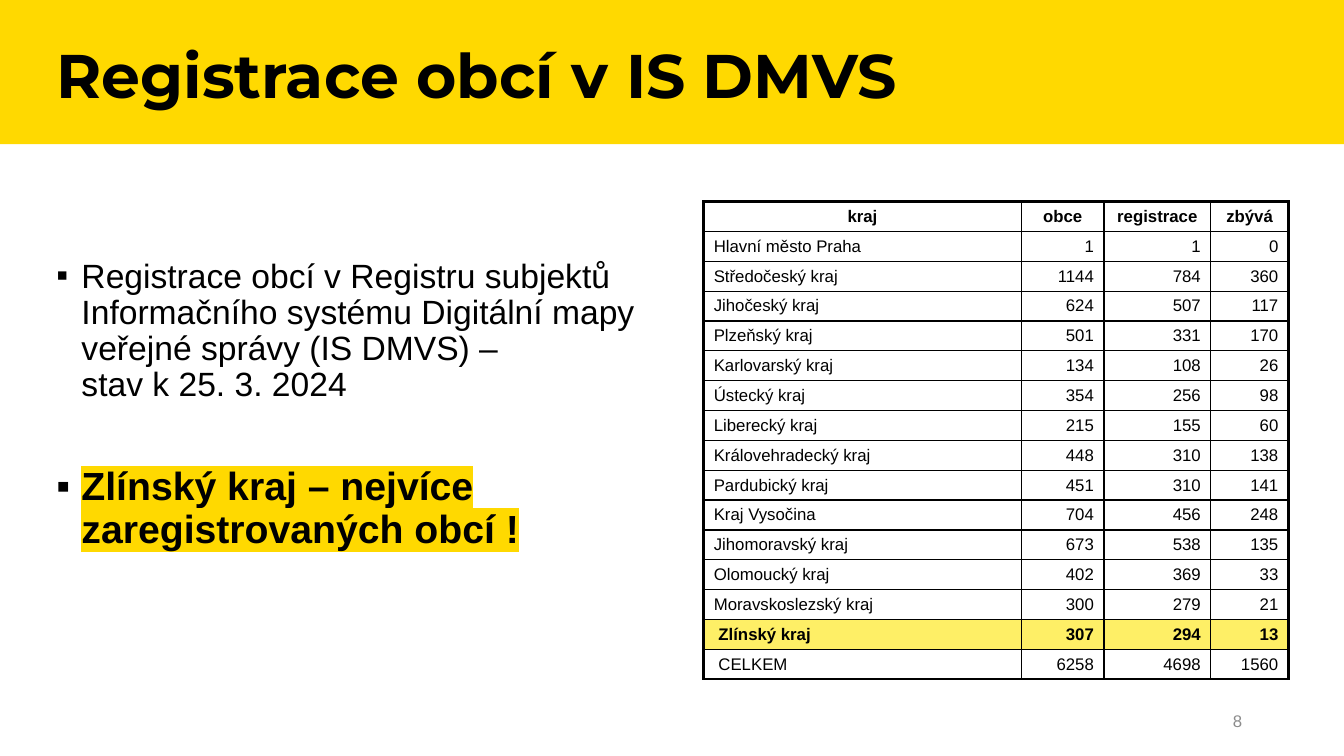
from lxml import etree
from pptx import Presentation, util as u
from pptx.dml.color import RGBColor
from pptx.enum import shapes, text
from pptx.oxml.ns import qn

WIDTH, HEIGHT = u.Inches(13.33), u.Inches(7.5)
YELLOW, PALE_YELLOW, BLACK, WHITE, GREY = "FFD900", "FEEF66", "000000", "FFFFFF", "8C8C8C"
LEFT, CENTER, RIGHT = text.PP_ALIGN.LEFT, text.PP_ALIGN.CENTER, text.PP_ALIGN.RIGHT
TOP, MIDDLE = text.MSO_ANCHOR.TOP, text.MSO_ANCHOR.MIDDLE

HEADER = ["kraj", "obce", "registrace", "zbývá"]
REGIONS = [
    ("Hlavní město Praha", 1, 1, 0),
    ("Středočeský kraj", 1144, 784, 360),
    ("Jihočeský kraj", 624, 507, 117),
    ("Plzeňský kraj", 501, 331, 170),
    ("Karlovarský kraj", 134, 108, 26),
    ("Ústecký kraj", 354, 256, 98),
    ("Liberecký kraj", 215, 155, 60),
    ("Královehradecký kraj", 448, 310, 138),
    ("Pardubický kraj", 451, 310, 141),
    ("Kraj Vysočina", 704, 456, 248),
    ("Jihomoravský kraj", 673, 538, 135),
    ("Olomoucký kraj", 402, 369, 33),
    ("Moravskoslezský kraj", 300, 279, 21),
    (" Zlínský kraj", 307, 294, 13),
    (" CELKEM", 6258, 4698, 1560),
]
HIGHLIGHTED = "Zlínský kraj"
COLUMN_WIDTHS = [3.15, 0.82, 1.06, 0.77]


def color(value):
    return RGBColor.from_string(value)


def area(x, y, w, h):
    """Turn percentages of the slide's width and height into lengths."""
    return [int(side * share / 100)
            for side, share in zip((WIDTH, HEIGHT, WIDTH, HEIGHT), (x, y, w, h))]


def fill(target, value):
    target.fill.solid()
    target.fill.fore_color.rgb = color(value)


def write(p, words, size=12, font="Arial", ink=BLACK, bold=False, align=LEFT,
          spacing=1.0, before=0, highlight=None):
    p.alignment, p.line_spacing, p.space_before = align, spacing, u.Pt(before)
    for i, line in enumerate(words.split("\n")):
        if i:
            p.add_line_break()
        r = p.add_run()
        r.text = line
        r.font.size, r.font.name, r.font.bold = u.Pt(size), font, bold
        r.font.color.rgb = color(ink)
        if highlight:
            mark = etree.Element(qn("a:highlight"))
            etree.SubElement(mark, qn("a:srgbClr"), val=highlight)
            r.font._element.find(qn("a:solidFill")).addnext(mark)


def add_bullet(p):
    pPr = p._p.get_or_add_pPr()
    indent = u.Inches(0.25)
    pPr.set("marL", str(indent))
    pPr.set("indent", str(-indent))
    etree.SubElement(pPr, qn("a:buFont"), typeface="Arial")
    etree.SubElement(pPr, qn("a:buChar"), char="▪")


def add_text_box(s, place, anchor=TOP):
    tf = s.shapes.add_textbox(*place).text_frame
    tf.word_wrap, tf.vertical_anchor = True, anchor
    return tf


def add_band(s, place):
    """Put the yellow band behind everything else."""
    sp = s.shapes.add_shape(shapes.MSO_SHAPE.RECTANGLE, *place)
    sp.shadow.inherit = False
    fill(sp, YELLOW)
    sp.line.fill.background()
    s.shapes._spTree.insert(2, sp._element)


def set_title(s, place, words):
    sp = s.shapes.title
    sp.left, sp.top, sp.width, sp.height = place
    tf = sp.text_frame
    tf.vertical_anchor, tf.auto_size = TOP, text.MSO_AUTO_SIZE.NONE
    write(tf.paragraphs[0], words, size=44, font="Montserrat", bold=True, spacing=0.9)


def set_borders(cell, outer):
    """Draw thick lines on the sides named in outer, thin ones elsewhere."""
    tcPr = cell._tc.get_or_add_tcPr()
    for i, side in enumerate("LRTB"):
        width = u.Pt(2.25 if side in outer else 1)
        ln = etree.Element(qn(f"a:ln{side}"), w=str(width))
        paint = etree.SubElement(ln, qn("a:solidFill"))
        etree.SubElement(paint, qn("a:srgbClr"), val=BLACK)
        tcPr.insert(i, ln)


def add_region_table(s, place):
    rows = [HEADER, *REGIONS]
    last_row, last_col = len(rows) - 1, len(HEADER) - 1
    table = s.shapes.add_table(len(rows), len(HEADER), *place).table
    for column, width in zip(table.columns, COLUMN_WIDTHS):
        column.width = u.Inches(width)
    for i, row in enumerate(rows):
        marked = row[0].strip() == HIGHLIGHTED
        table.rows[i].height = place[3] // len(rows)
        for j, value in enumerate(row):
            cell = table.cell(i, j)
            cell.margin_top = cell.margin_bottom = 0
            cell.vertical_anchor = MIDDLE
            fill(cell, PALE_YELLOW if marked else WHITE)
            align = CENTER if i == 0 else RIGHT if j else LEFT
            write(cell.text_frame.paragraphs[0], str(value), bold=marked or i == 0, align=align)
            edges = {"L": j == 0, "R": j == last_col, "T": i == 0, "B": i == last_row}
            set_borders(cell, [side for side, on_edge in edges.items() if on_edge])


def main():
    prs = Presentation()
    prs.slide_width, prs.slide_height = WIDTH, HEIGHT
    s = prs.slides.add_slide(prs.slide_layouts.get_by_name("Title Only"))

    add_band(s, area(0, 0, 100, 19.07))
    set_title(s, area(3.45, 5.33, 92.4, 13.6), "Registrace obcí v IS DMVS")

    tf = add_text_box(s, area(3.45, 33.6, 48.9, 56.5))
    status, leader = tf.paragraphs[0], tf.add_paragraph()
    write(status, "Registrace obcí v Registru subjektů Informačního systému Digitální mapy "
          "veřejné správy (IS DMVS) –\nstav k 25. 3. 2024", size=24, spacing=0.9)
    write(leader, "Zlínský kraj – nejvíce zaregistrovaných obcí !", size=28, bold=True,
          spacing=0.9, before=45, highlight=YELLOW)
    for p in (status, leader):
        add_bullet(p)

    add_region_table(s, area(52.36, 26.67, 43.5, 63.2))

    tf = add_text_box(s, area(70.67, 92.67, 22.5, 5.33), MIDDLE)
    write(tf.paragraphs[0], "8", ink=GREY, align=RIGHT)
    prs.save("out.pptx")


if __name__ == "__main__":
    main()
